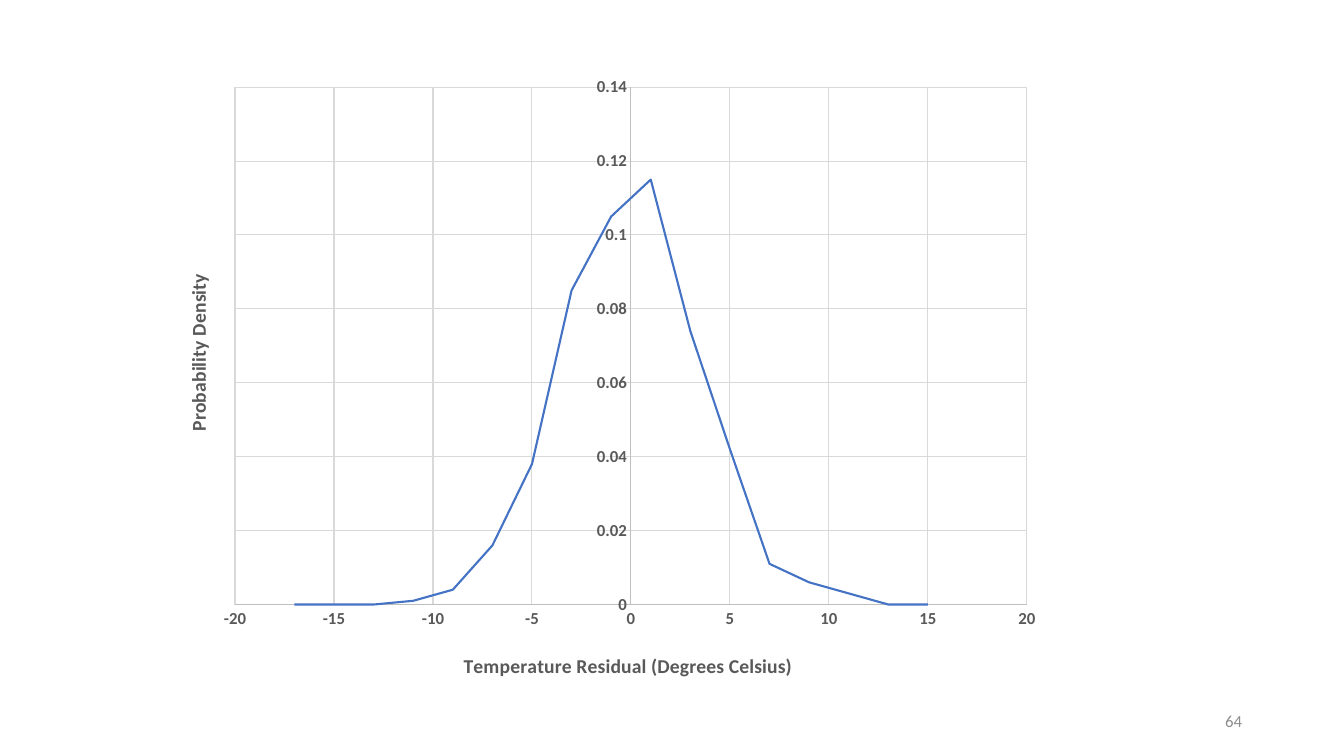
import dataclasses

import pptx
import pptx.chart.data
import pptx.dml.color
import pptx.enum.chart
import pptx.enum.text
import pptx.oxml
import pptx.oxml.ns
import pptx.util


@dataclasses.dataclass(frozen=True)
class Theme:
    face: str = "Calibri"
    ink: str = "595959"
    mute: str = "8C8C8C"
    axis: str = "BFBFBF"
    grid: str = "D9D9D9"
    curve: str = "4472C4"
    head: int = 14
    body: int = 12
    base: int = 10
    thin: float = 0.75
    thick: float = 1.5


def px(count):
    return pptx.util.Emu(round(count * 914400 / 100.8))


def tint(code):
    return pptx.dml.color.RGBColor.from_string(code)


def style(font, face, size, color, bold=False):
    font.name = face
    font.size = pptx.util.Pt(size)
    font.bold = bold
    font.color.rgb = tint(color)


def write(frame, text, align=None, **look):
    """Set one paragraph of text with the given font format."""
    par = frame.paragraphs[0]
    par.alignment = align
    run = par.add_run()
    run.text = text
    style(run.font, **look)


def stroke(line, color, width):
    line.color.rgb = tint(color)
    line.width = pptx.util.Pt(width)


def place(host, index, **parts):
    """Give a chart part a manual layout, in fractions of the chart."""
    for old in host.findall(pptx.oxml.ns.qn("c:layout")):
        host.remove(old)
    modes = {"layoutTarget": "inner"} if "w" in parts else {}
    modes |= {"xMode": "edge", "yMode": "edge"}
    body = "".join(f'<c:{key} val="{val}"/>' for key, val in (modes | parts).items())
    host.insert(index, pptx.oxml.parse_xml(
        f'<c:layout {pptx.oxml.ns.nsdecls("c")}>'
        f"<c:manualLayout>{body}</c:manualLayout></c:layout>"))


class Deck:
    def __init__(self, theme):
        self.theme = theme
        self.file = pptx.Presentation()
        self.file.slide_width, self.file.slide_height = px(1344), px(756)
        self.slide = self.file.slides.add_slide(self.file.slide_layouts[6])

    def label(self, text, box, align, **look):
        frame = self.slide.shapes.add_textbox(*map(px, box)).text_frame
        frame.word_wrap = True
        frame.vertical_anchor = pptx.enum.text.MSO_ANCHOR.MIDDLE
        write(frame, text, align, face=self.theme.face, **look)

    def axis(self, axis, title, span, step, spot):
        theme = self.theme
        axis.minimum_scale, axis.maximum_scale = span
        axis.major_unit = step
        axis.has_major_gridlines = True
        axis.major_tick_mark = pptx.enum.chart.XL_TICK_MARK.NONE
        axis.minor_tick_mark = pptx.enum.chart.XL_TICK_MARK.NONE
        axis.tick_labels.number_format = "General"
        axis.tick_labels.number_format_is_linked = False
        stroke(axis.format.line, theme.axis, theme.thin)
        stroke(axis.major_gridlines.format.line, theme.grid, theme.thin)
        style(axis.tick_labels.font, theme.face, theme.body, theme.ink, True)
        write(axis.axis_title.text_frame, title, face=theme.face,
              size=theme.head, color=theme.ink, bold=True)
        place(axis.axis_title._element, 1, x=spot[0], y=spot[1])

    def curve(self, box, name, points):
        theme = self.theme
        data = pptx.chart.data.XyChartData()
        series = data.add_series(name)
        for point in points:
            series.add_data_point(*point)
        kind = pptx.enum.chart.XL_CHART_TYPE.XY_SCATTER_LINES_NO_MARKERS
        chart = self.slide.shapes.add_chart(kind, *map(px, box), data).chart
        chart.has_legend = chart.has_title = False
        style(chart.font, theme.face, theme.base, "000000")
        plot = chart.plots[0]
        plot.vary_by_categories = False
        plot.series[0].smooth = False
        stroke(plot.series[0].format.line, theme.curve, theme.thick)
        place(chart._chartSpace.chart.plotArea, 0, x=0.09, y=0.04, w=0.88, h=0.82)
        return chart


def main():
    theme = Theme()
    deck = Deck(theme)
    deck.label("64", (950, 701, 302, 40), pptx.enum.text.PP_ALIGN.RIGHT,
               size=theme.body, color=theme.mute)
    density = (0, 0, 0, 0.001, 0.004, 0.016, 0.038, 0.085, 0.105, 0.115,
               0.074, 0.042, 0.011, 0.006, 0.003, 0, 0)
    chart = deck.curve((154, 62, 900, 631), "Series 1",
                       zip(range(-17, 16, 2), density))
    deck.axis(chart.category_axis, "Temperature Residual (Degrees Celsius)",
              (-20, 20), 5, (0.34, 0.93))
    deck.axis(chart.value_axis, "Probability Density",
              (0, 0.14), 0.02, (0.03, 0.33))
    deck.file.save("out.pptx")


if __name__ == "__main__":
    main()
